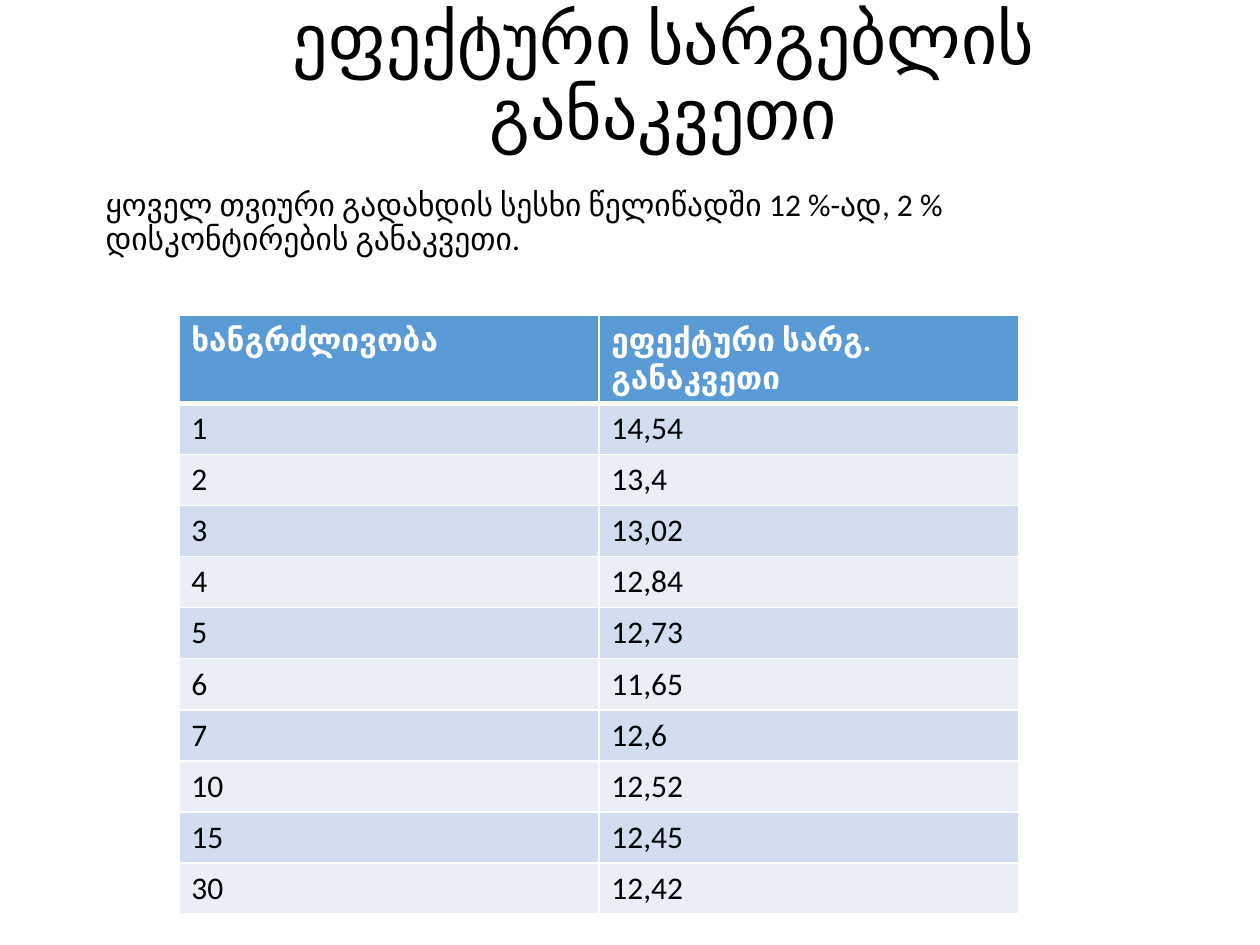
import pptx
import pptx.dml.color
import pptx.enum.text
import pptx.oxml
import pptx.oxml.ns
import pptx.util
from lxml import etree

Pt = pptx.util.Pt
ALIGN = pptx.enum.text.PP_ALIGN
ANCHOR = pptx.enum.text.MSO_ANCHOR

TITLE = "ეფექტური სარგებლის განაკვეთი"
NOTE = "ყოველ თვიური გადახდის სესხი წელიწადში 12 %-ად, 2 % დისკონტირების განაკვეთი."
HEAD = ("ხანგრძლივობა", "ეფექტური სარგ. განაკვეთი")
RATES = [
    ("1", "14,54"), ("2", "13,4"), ("3", "13,02"), ("4", "12,84"),
    ("5", "12,73"), ("6", "11,65"), ("7", "12,6"), ("10", "12,52"),
    ("15", "12,45"), ("30", "12,42"),
]
BANDS = ("D2DEEF", "EAEFF7")


def paint(target, color):
    """Give a font or a fill a solid colour."""
    rgb = pptx.dml.color.RGBColor.from_string(color)
    if hasattr(target, "solid"):
        target.solid()
        target.fore_color.rgb = rgb
    else:
        target.color.rgb = rgb


def write(frame, text, size=18, color="000000", bold=False,
          align=ALIGN.LEFT, line=None, before=None, indent=None):
    par = frame.paragraphs[0]
    par.alignment = align
    if line is not None:
        par.line_spacing = line
    if before is not None:
        par.space_before = Pt(before)
    if indent is not None:
        props = par._p.get_or_add_pPr()
        props.set("marL", str(Pt(indent)))
        props.set("indent", "0")
    run = par.add_run()
    run.text = text
    run.font.name = "Calibri"
    run.font.size = Pt(size)
    run.font.bold = bold
    paint(run.font, color)


def add_text(slide, box, text, anchor=ANCHOR.TOP, **style):
    frame = slide.shapes.add_textbox(*map(Pt, box)).text_frame
    frame.word_wrap = True
    frame.vertical_anchor = anchor
    write(frame, text, **style)


def edge(cell, low=1):
    """Draw white cell borders, the bottom one low points wide."""
    props = cell._tc.get_or_add_tcPr()
    widths = {"lnL": 1, "lnR": 1, "lnT": 1, "lnB": low}
    for spot, (tag, width) in enumerate(widths.items()):
        line = etree.Element(pptx.oxml.ns.qn("a:" + tag), w=str(Pt(width)))
        fill = etree.SubElement(line, pptx.oxml.ns.qn("a:solidFill"))
        etree.SubElement(fill, pptx.oxml.ns.qn("a:srgbClr"), val="FFFFFF")
        props.insert(spot, line)


def add_rates(slide, left, top, width, height):
    rows = [HEAD] + RATES
    frame = slide.shapes.add_table(
        len(rows), len(HEAD), Pt(left), Pt(top), Pt(width), Pt(height))
    table = frame.table
    for r, row in enumerate(rows):
        head = r == 0
        for c, text in enumerate(row):
            cell = table.cell(r, c)
            paint(cell.fill, "5B9BD5" if head else BANDS[(r - 1) % 2])
            edge(cell, low=3 if head else 1)
            if r == 1:
                cell._tc.tcPr.find(pptx.oxml.ns.qn("a:lnT")).set("w", str(Pt(3)))
            write(cell.text_frame, text, bold=head,
                  color="FFFFFF" if head else "000000")


def main():
    deck = pptx.Presentation()
    deck.slide_width, deck.slide_height = Pt(720), Pt(540)
    slide = deck.slides.add_slide(deck.slide_layouts[6])
    add_text(slide, (53.3, 17.3, 637.2, 74.9), TITLE, anchor=ANCHOR.BOTTOM,
             size=40, align=ALIGN.CENTER, line=0.9, indent=14.4)
    add_text(slide, (53.3, 104.4, 629.3, 409), NOTE, line=0.9, before=7.5)
    add_rates(slide, 102.2, 180, 480, 321.2)
    deck.save("out.pptx")


if __name__ == "__main__":
    main()
